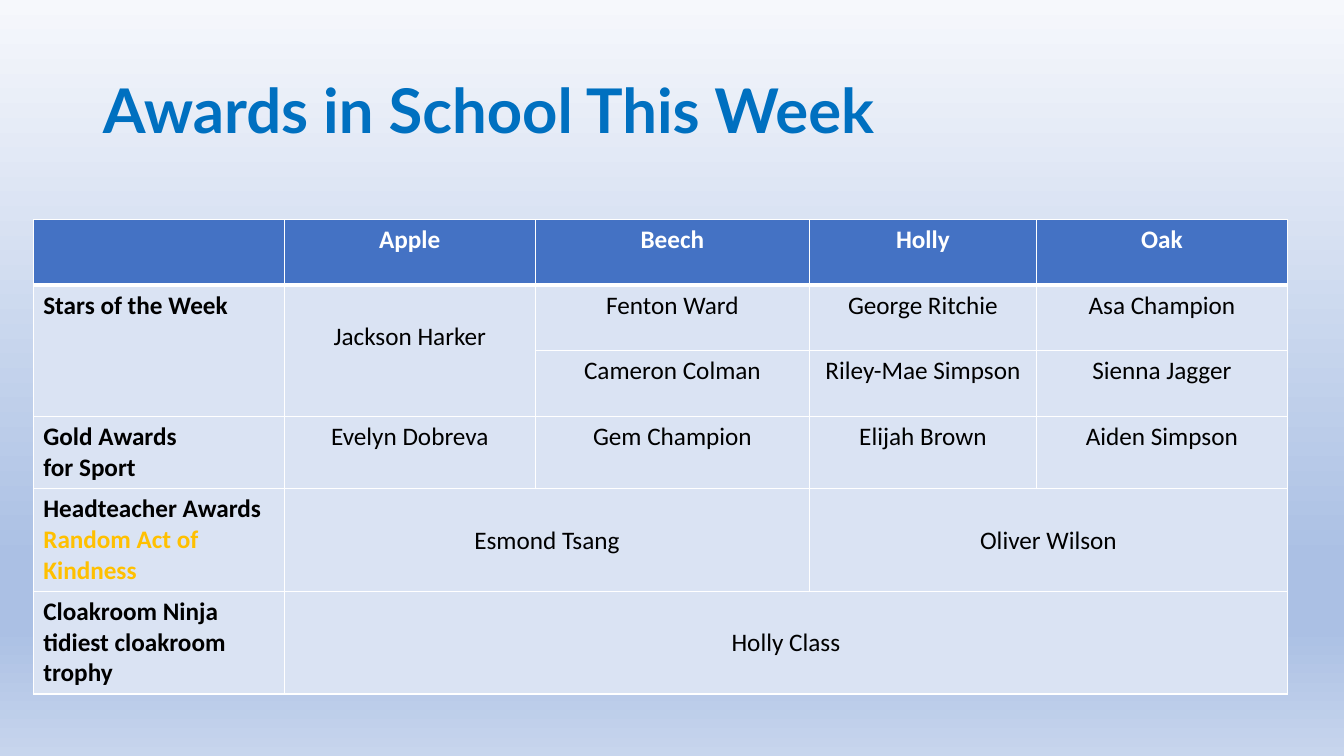
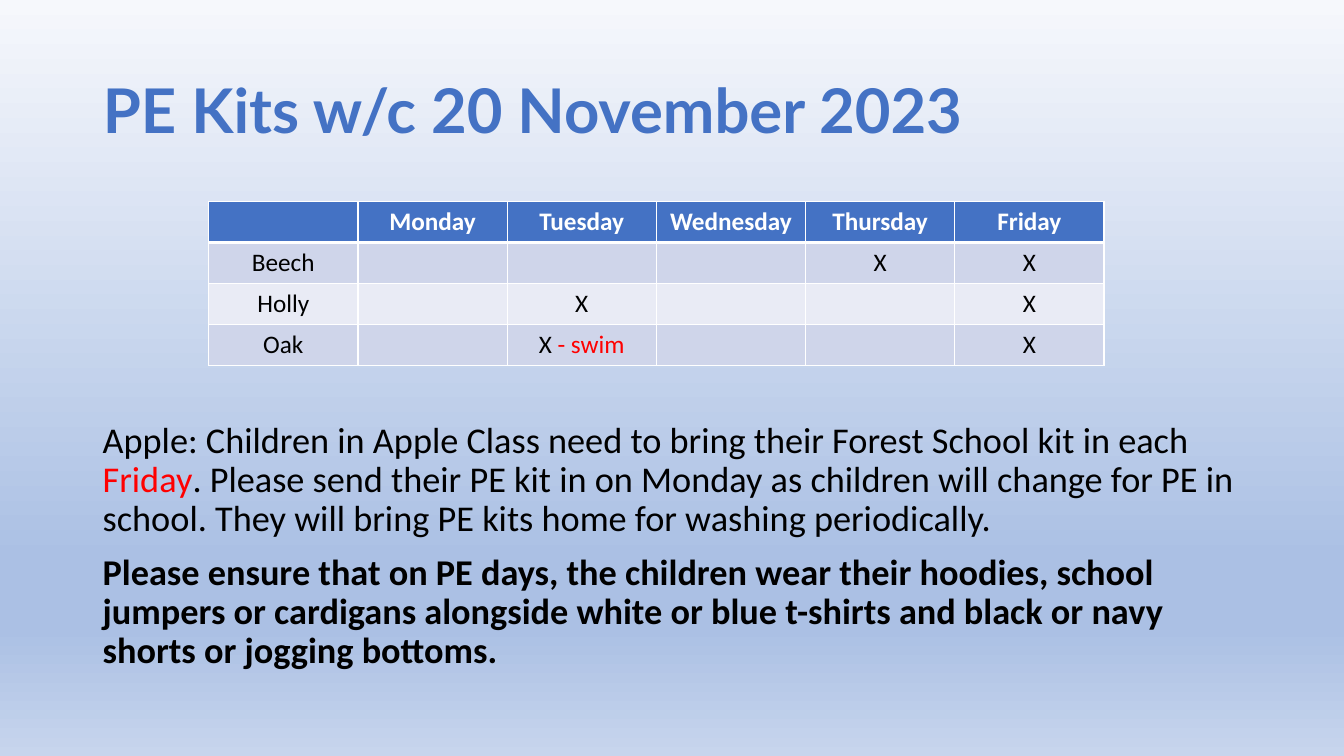
"""Build the weekly school awards and PE kit slides."""
from lxml import etree
from pptx import Presentation
from pptx import util as u
from pptx.dml.color import RGBColor
from pptx.enum import text
from pptx.oxml import ns

BLUE, WHITE, BLACK, RED, GOLD = "4472C4", "FFFFFF", "000000", "FF0000", "FFC000"
AWARD_FILL = "DAE3F3"
KIT_BANDS = ("CFD5EA", "E9EBF5")
BACKDROP = ((0, "F6F8FC"), (74, "ABC0E4"), (83, "ABC0E4"), (100, "C7D5ED"))
TITLE_FONT, BODY_FONT = "Lato", "Calibri"
MARGIN, CONTENT_WIDTH = 0.92, 11.5
LOWERED = 0.36


def rgb(value):
    """Turn a hex string into a colour."""
    return RGBColor.from_string(value)


def add_element(parent, tag, **attributes):
    """Append a DrawingML element."""
    return etree.SubElement(parent, ns.qn(tag), attributes)


def set_backdrop(master):
    """Give every slide the vertical gradient."""
    fill = master.background.fill
    fill.gradient()
    fill.gradient_angle = 270
    stops = fill.gradient_stops[0]._gs.getparent()
    for stop in list(stops):
        stops.remove(stop)
    for position, colour in BACKDROP:
        stop = add_element(stops, "a:gs", pos=str(position * 1000))
        add_element(stop, "a:srgbClr", val=colour)


def add_run(paragraph, words, size, colour, bold=False, font=BODY_FONT):
    """Add one formatted run."""
    run = paragraph.add_run()
    run.text = words
    run.font.name = font
    run.font.size = u.Pt(size)
    run.font.bold = bold
    run.font.color.rgb = rgb(colour)


def add_titled_slide(deck, words, colour):
    """Add a title-only slide with its formatted title."""
    slide = deck.slides.add_slide(deck.slide_layouts[5])
    title = slide.shapes.title
    title.left, title.top = u.Inches(MARGIN), u.Inches(0.4)
    title.width, title.height = u.Inches(CONTENT_WIDTH), u.Inches(1.45)
    title.text_frame.vertical_anchor = text.MSO_ANCHOR.MIDDLE
    paragraph = title.text_frame.paragraphs[0]
    paragraph.alignment = text.PP_ALIGN.LEFT
    paragraph.line_spacing = 0.9
    add_run(paragraph, words, 44, colour, True, TITLE_FONT)
    return slide


def add_grid(slide, left, top, widths, heights):
    """Add a table with the given column widths and row heights."""
    frame = slide.shapes.add_table(
        len(heights), len(widths), u.Inches(left), u.Inches(top),
        u.Inches(sum(widths)), u.Inches(sum(heights)))
    table = frame.table
    table.horz_banding = False
    for column, width in zip(table.columns, widths):
        column.width = u.Inches(width)
    for row, height in zip(table.rows, heights):
        row.height = u.Inches(height)
    return table


def style_cell(cell, row, fill):
    """Draw the white borders and fill of a cell."""
    properties = cell._tc.get_or_add_tcPr()
    thick = {0: "a:lnB", 1: "a:lnT"}.get(row)
    for side in ("a:lnL", "a:lnR", "a:lnT", "a:lnB"):
        width = u.Pt(3 if side == thick else 1)
        line = add_element(properties, side, w=str(int(width)))
        add_element(add_element(line, "a:solidFill"), "a:srgbClr", val=WHITE)
    cell.fill.solid()
    cell.fill.fore_color.rgb = rgb(fill)


def fill_cell(cell, paragraphs, colour=BLACK, bold=False, centred=True):
    """Write paragraphs of (words, colour) runs or plain words."""
    for index, runs in enumerate(paragraphs):
        frame = cell.text_frame
        paragraph = frame.add_paragraph() if index else frame.paragraphs[0]
        paragraph.alignment = text.PP_ALIGN.CENTER if centred else text.PP_ALIGN.LEFT
        for words, run_colour in [(runs, colour)] if isinstance(runs, str) else runs:
            add_run(paragraph, words, 18, run_colour, bold)


def fill_header(table, names):
    """Write the blue header row, leaving its first cell empty."""
    for column, name in enumerate(("",) + names):
        cell = table.cell(0, column)
        style_cell(cell, 0, BLUE)
        if name:
            fill_cell(cell, [name], WHITE, True)


def build_awards(deck):
    """Build the slide of this week's awards."""
    slide = add_titled_slide(deck, "Awards in School This Week", "0070C0")
    table = add_grid(slide, 0.33, 2.18, (2.49, 2.49, 2.72, 2.25, 2.49),
                     (0.65, 0.65, 0.65, 0.72, 1.01, 1.02))
    fill_header(table, ("Apple", "Beech", "Holly", "Oak"))
    for row in range(1, 6):
        for column in range(5):
            style_cell(table.cell(row, column), row, AWARD_FILL)
    awards = {
        1: ["Stars of the Week"],
        3: ["Gold Awards", "for Sport"],
        4: [[("Headteacher Awards ", BLACK), ("Random Act of Kindness", GOLD)]],
        5: ["Cloakroom Ninja tidiest cloakroom trophy"],
    }
    for row, award in awards.items():
        fill_cell(table.cell(row, 0), award, bold=True, centred=False)
    table.cell(1, 0).merge(table.cell(2, 0))
    winners = {
        1: ("Fenton Ward", "George Ritchie", "Asa Champion"),
        2: ("Cameron Colman", "Riley-Mae Simpson", "Sienna Jagger"),
        3: ("Gem Champion", "Elijah Brown", "Aiden Simpson"),
    }
    for row, names in winners.items():
        for column, name in enumerate(names, 2):
            fill_cell(table.cell(row, column), [name])
    fill_cell(table.cell(3, 1), ["Evelyn Dobreva"])
    shared = (
        ("Jackson Harker", (1, 1), (2, 1)),
        ("Esmond Tsang", (4, 1), (4, 2)),
        ("Oliver Wilson", (4, 3), (4, 4)),
        ("Holly Class", (5, 1), (5, 4)),
    )
    for name, first, last in shared:
        cell = table.cell(*first)
        cell.merge(table.cell(*last))
        cell.margin_top = u.Inches(LOWERED)
        fill_cell(cell, [name])


def build_kits(deck):
    """Build the slide of PE kit days and reminders."""
    slide = add_titled_slide(deck, "PE Kits w/c 20 November 2023", BLUE)
    days = ("Monday", "Tuesday", "Wednesday", "Thursday", "Friday")
    table = add_grid(slide, 2.07, 2, [1.48] * 6, [0.405] * 4)
    fill_header(table, days)
    swim = [("X ", BLACK), ("- swim", RED)]
    kit_days = (
        ("Beech", {"Thursday": "X", "Friday": "X"}),
        ("Holly", {"Tuesday": "X", "Friday": "X"}),
        ("Oak", {"Tuesday": swim, "Friday": "X"}),
    )
    for row, (class_name, marks) in enumerate(kit_days, 1):
        entries = [class_name] + [marks.get(day) for day in days]
        for column, entry in enumerate(entries):
            cell = table.cell(row, column)
            style_cell(cell, row, KIT_BANDS[(row - 1) % 2])
            if entry:
                fill_cell(cell, [entry])
    add_reminders(slide)


def add_reminders(slide):
    """Add the two paragraphs below the kit table."""
    reminders = (
        (("Apple: Children in Apple Class need to bring their Forest School kit "
          "in each ", BLACK, False),
         ("Friday", RED, False),
         (". Please send their PE kit in on Monday as children will change for PE "
          "in school. They will bring PE kits home for washing periodically.",
          BLACK, False)),
        (("Please ensure that on PE days, the children wear their hoodies, school "
          "jumpers or cardigans alongside white or blue t-shirts and black or navy "
          "shorts or jogging bottoms.", BLACK, True),),
    )
    frame = slide.shapes.add_textbox(
        u.Inches(MARGIN), u.Inches(4.14),
        u.Inches(CONTENT_WIDTH), u.Inches(2.62)).text_frame
    frame.word_wrap = True
    for index, runs in enumerate(reminders):
        paragraph = frame.add_paragraph() if index else frame.paragraphs[0]
        paragraph.line_spacing = 0.9
        if index:
            paragraph.space_before = u.Pt(10)
        for words, colour, bold in runs:
            add_run(paragraph, words, 25.9, colour, bold)


def main():
    """Build and save the deck."""
    deck = Presentation()
    deck.slide_width, deck.slide_height = u.Inches(13.33), u.Inches(7.5)
    set_backdrop(deck.slide_master)
    build_awards(deck)
    build_kits(deck)
    deck.save("out.pptx")


if __name__ == "__main__":
    main()
